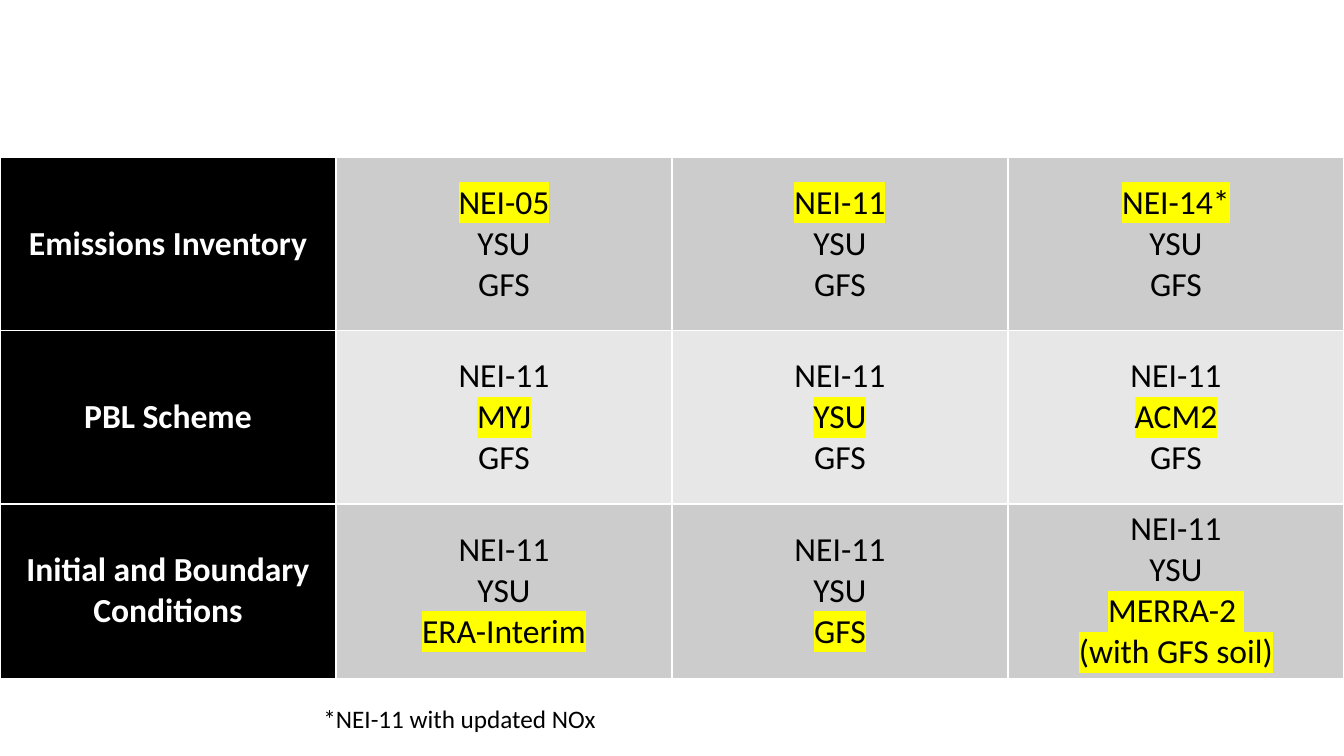
from lxml.etree import SubElement
from pptx import Presentation
from pptx.dml.color import RGBColor
from pptx.enum.text import MSO_ANCHOR as Anchor, PP_ALIGN as Align
from pptx.oxml import parse_xml
from pptx.oxml.ns import nsdecls, qn
from pptx.util import Cm, Pt

EXPERIMENTS = [
    ("Emissions Inventory", [
        ["NEI-05", "YSU", "GFS"],
        ["NEI-11", "YSU", "GFS"],
        ["NEI-14*", "YSU", "GFS"],
    ]),
    ("PBL Scheme", [
        ["NEI-11", "MYJ", "GFS"],
        ["NEI-11", "YSU", "GFS"],
        ["NEI-11", "ACM2", "GFS"],
    ]),
    ("Initial and Boundary Conditions", [
        ["NEI-11", "YSU", "ERA-Interim"],
        ["NEI-11", "YSU", "GFS"],
        ["NEI-11", "YSU", "MERRA-2 ", "(with GFS soil)"],
    ]),
]
FOOTNOTE = "*NEI-11 with updated NOx"
BLACK, WHITE, YELLOW = "000000", "FFFFFF", "FFFF00"
BANDS = ["CCCCCC", "E7E7E7"]
FONT = "Calibri"
SLIDE_WIDTH, SLIDE_HEIGHT = Cm(33.87), Cm(19.05)
GRID_TOP, ROW_HEIGHT = Cm(3.96), Cm(4.37)


def paint(colour_format, value):
    colour_format.rgb = RGBColor.from_string(value)


def style(run, size, colour, bold=False):
    run.font.name = FONT
    run.font.size = Pt(size)
    run.font.bold = bold
    run.font.fill.solid()
    paint(run.font.fill.fore_color, colour)


def highlight(run):
    marker = parse_xml(f'<a:highlight {nsdecls("a")}><a:srgbClr val="{YELLOW}"/></a:highlight>')
    run.font._element.find(qn("a:solidFill")).addnext(marker)


def fill_cell(cell, lines, background, colour, bold=False, varied=None):
    cell.vertical_anchor = Anchor.MIDDLE
    properties = cell._tc.get_or_add_tcPr()
    for side in ("a:lnL", "a:lnR", "a:lnT", "a:lnB"):
        border = SubElement(properties, qn(side), w=str(Pt(1)))
        SubElement(SubElement(border, qn("a:solidFill")), qn("a:srgbClr"), val=WHITE)
    cell.fill.solid()
    paint(cell.fill.fore_color, background)
    cell.text_frame.text = "\n".join(lines)
    for position, paragraph in enumerate(cell.text_frame.paragraphs):
        paragraph.alignment = Align.CENTER
        for run in paragraph.runs:
            style(run, 24, colour, bold)
            if min(position, len(EXPERIMENTS) - 1) == varied:
                highlight(run)


def main():
    deck = Presentation()
    deck.slide_width, deck.slide_height = SLIDE_WIDTH, SLIDE_HEIGHT
    slide = deck.slides.add_slide(deck.slide_layouts[6])

    row_count = len(EXPERIMENTS)
    grid = slide.shapes.add_table(row_count, 1 + len(EXPERIMENTS[0][1]), 0, GRID_TOP,
                                  SLIDE_WIDTH, ROW_HEIGHT * row_count).table
    grid.first_row = grid.horz_banding = False
    for row, (factor, setups) in enumerate(EXPERIMENTS):
        fill_cell(grid.cell(row, 0), [factor], BLACK, WHITE, bold=True)
        for column, setup in enumerate(setups, 1):
            fill_cell(grid.cell(row, column), setup, BANDS[row % 2], BLACK, varied=row)

    footnote = slide.shapes.add_textbox(Cm(7.9), Cm(17.6), Cm(21.74), Cm(1.03)).text_frame
    footnote.word_wrap = True
    footnote.text = FOOTNOTE
    style(footnote.paragraphs[0].runs[0], 18, BLACK)

    deck.save("out.pptx")


if __name__ == "__main__":
    main()
